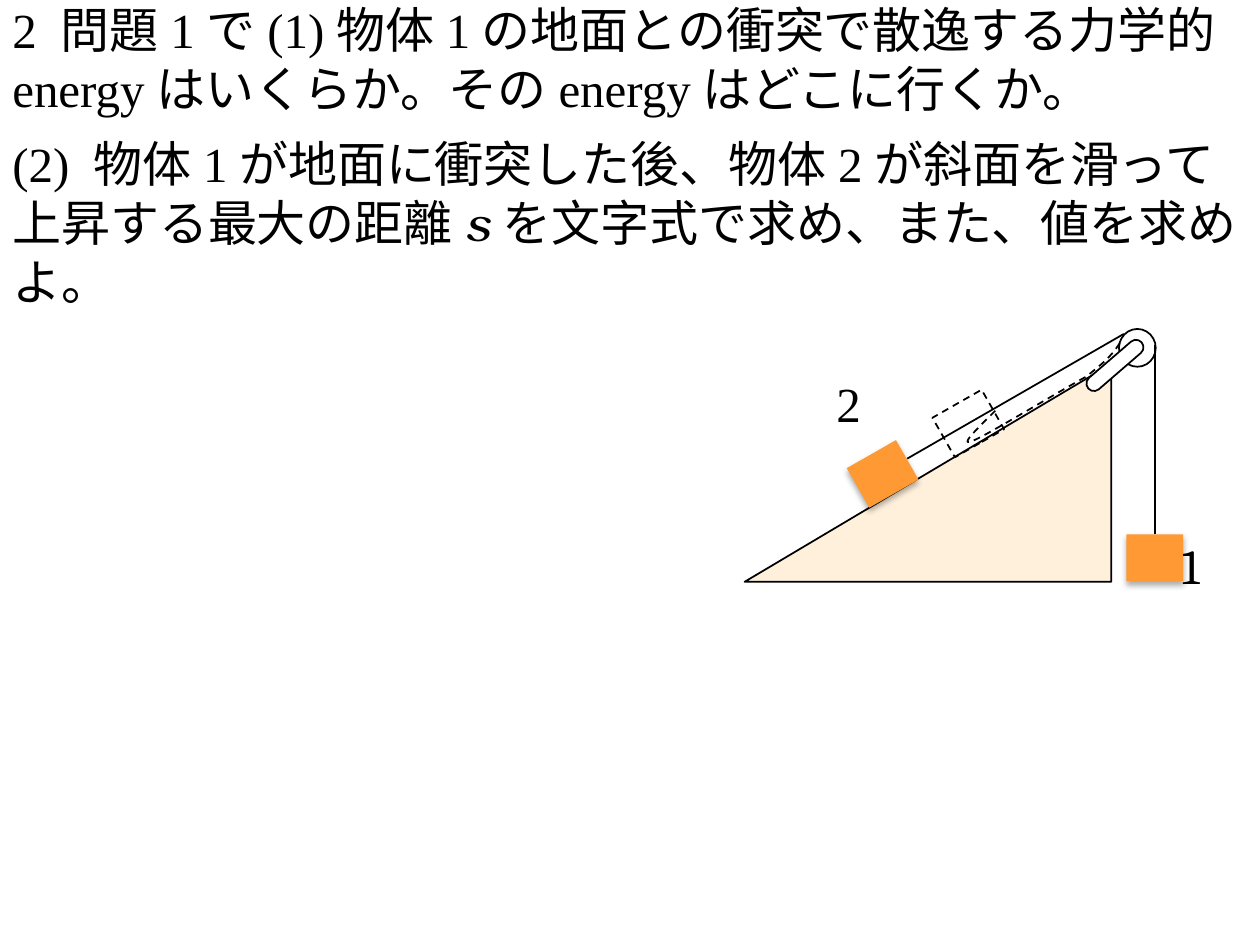
from pptx import Presentation
from pptx.dml.color import RGBColor
from pptx.enum.dml import MSO_LINE
from pptx.enum.shapes import MSO_CONNECTOR, MSO_SHAPE
from pptx.enum.text import PP_ALIGN
from pptx.oxml import parse_xml
from pptx.oxml.ns import nsdecls
from pptx.util import Pt

BLACK = RGBColor(0, 0, 0)
WHITE = RGBColor(255, 255, 255)
CREAM = RGBColor(0xFF, 0xF0, 0xDC)
ORANGE = RGBColor(0xFF, 0x99, 0x33)
TIMES = "Times New Roman"
EMPTY = f"<a:effectLst {nsdecls('a')}/>"
SHADE = (
    f"<a:effectLst {nsdecls('a')}>"
    f'<a:outerShdw blurRad="{Pt(3.5)}" dist="{Pt(2.2)}" dir="5400000" rotWithShape="0">'
    '<a:srgbClr val="000000"><a:alpha val="32000"/></a:srgbClr>'
    "</a:outerShdw></a:effectLst>"
)
SOLID = {"width": Pt(1)}
DASH = {"width": Pt(1), "dash_style": MSO_LINE.DASH}


def apply(item, form):
    """Set each attribute named in a dict of format values."""
    for name, value in form.items():
        setattr(item, name, value)


def style(shape, fill=None, line=SOLID, effect=EMPTY):
    """Give a shape its fill, outline and shadow."""
    if fill is None:
        shape.fill.background()
    else:
        shape.fill.solid()
        shape.fill.fore_color.rgb = fill
    if line is None:
        shape.line.fill.background()
    else:
        shape.line.color.rgb = BLACK
        apply(shape.line, line)
    shape._element.spPr.append(parse_xml(effect))


def write(slide, box, runs, align=PP_ALIGN.LEFT):
    """Place a text box holding one paragraph of (text, font, italic) runs."""
    frame = slide.shapes.add_textbox(*map(Pt, box)).text_frame
    frame.word_wrap = True
    para = frame.paragraphs[0]
    apply(para, {"alignment": align, "space_before": Pt(3)})
    for text, font, slant in runs:
        run = para.add_run()
        run.text = text
        apply(run.font, {"name": font, "size": Pt(28), "italic": slant})
        run.font.color.rgb = BLACK


def ask(slide, box):
    """Write the two questions one under the other."""
    left, top, width, height = box
    parts = [
        [("2 問題1で(1)物体1の地面との衝突で散逸する力学的energyはいくらか。"
          "そのenergyはどこに行くか。", TIMES, False)],
        [("(2) 物体1が地面に衝突した後、物体2が斜面を滑って上昇する最大の距離", TIMES, False),
         ("s", "TeX Gyre Bonum", True),
         ("を文字式で求め、また、値を求めよ。", TIMES, False)],
    ]
    for row, runs in enumerate(parts):
        write(slide, (left, top + row * 76.3, width, height), runs)


def bend(knots, steps=12):
    """Return points along a chain of cubic curves."""
    points = [knots[0]]
    for start in range(0, len(knots) - 1, 3):
        quad = knots[start:start + 4]
        for step in range(1, steps + 1):
            t = step / steps
            rates = ((1 - t) ** 3, 3 * t * (1 - t) ** 2, 3 * t * t * (1 - t), t ** 3)
            points.append(tuple(sum(r * p[axis] for r, p in zip(rates, quad))
                                for axis in (0, 1)))
    return points


def incline(slide, box):
    """Draw the slope, pulley, cord and blocks within a box."""
    left, top, width, height = box

    def spot(x, y):
        return Pt(left + x), Pt(top + y)

    def put(kind, x, y, wide, high, turn=0, **look):
        shape = slide.shapes.add_shape(kind, *spot(x, y), Pt(wide), Pt(high))
        shape.rotation = turn
        style(shape, **look)
        return shape

    def cord(start, end):
        line = slide.shapes.add_connector(
            MSO_CONNECTOR.STRAIGHT, *spot(*start), *spot(*end))
        line.line.color.rgb = BLACK
        apply(line.line, SOLID)
        line._element.spPr.append(parse_xml(EMPTY))

    block = {"fill": ORANGE, "line": None, "effect": SHADE}
    slope = put(MSO_SHAPE.RIGHT_TRIANGLE, 0, 20, 209.5, 124.5, fill=CREAM)
    slope._element.spPr.xfrm.set("flipH", "1")
    put(MSO_SHAPE.RECTANGLE, 218.2, 117.3, 32.4, 26.8, **block)
    put(MSO_SHAPE.RECTANGLE, 62.7, 69.8, 32.4, 26, 330.3, **block)
    cord((92.9, 74.1), (216.7, 2.8))
    put(MSO_SHAPE.OVAL, 213.9, 0, 21, 21.6)
    cord((234.7, 117.3), (234.7, 9.3))
    arm = put(MSO_SHAPE.ROUNDED_RECTANGLE, 191.5, 16.5, 40.3, 8.6, 319.2, fill=WHITE)
    arm.adjustments[0] = 0.5
    for text, font, x, y, wide, high in (
        ("2", TIMES, 45.4, 22.2, 40.3, 45.4),
        ("1", "Cambria", 242.7, 114.4, 28.1, 38.2),
    ):
        write(slide, (left + x, top + y, wide, high), [(text, font, False)],
              PP_ALIGN.JUSTIFY)
    put(MSO_SHAPE.RECTANGLE, 111.6, 41, 32.4, 26, 330.3, line=DASH)
    trail = [spot(*point) for point in bend([
        (143.3, 46.7), (133.9, 56.1), (121.7, 67.6), (130.3, 64),
        (139, 60.4), (179.3, 35.9), (195.1, 27.3),
        (208.1, 17.2), (211, 13.6), (216, 5.7)])]
    build = slide.shapes.build_freeform(*trail[0])
    build.add_line_segments(trail[1:], close=False)
    style(build.convert_to_shape(), line=DASH)


def main():
    """Build and save the slide."""
    deck = Presentation()
    apply(deck, {"slide_width": Pt(720), "slide_height": Pt(540)})
    slide = deck.slides.add_slide(deck.slide_layouts[6])
    ask(slide, (0, -3.6, 720, 75))
    incline(slide, (425.5, 188, 271, 153))
    deck.save("out.pptx")


if __name__ == "__main__":
    main()
